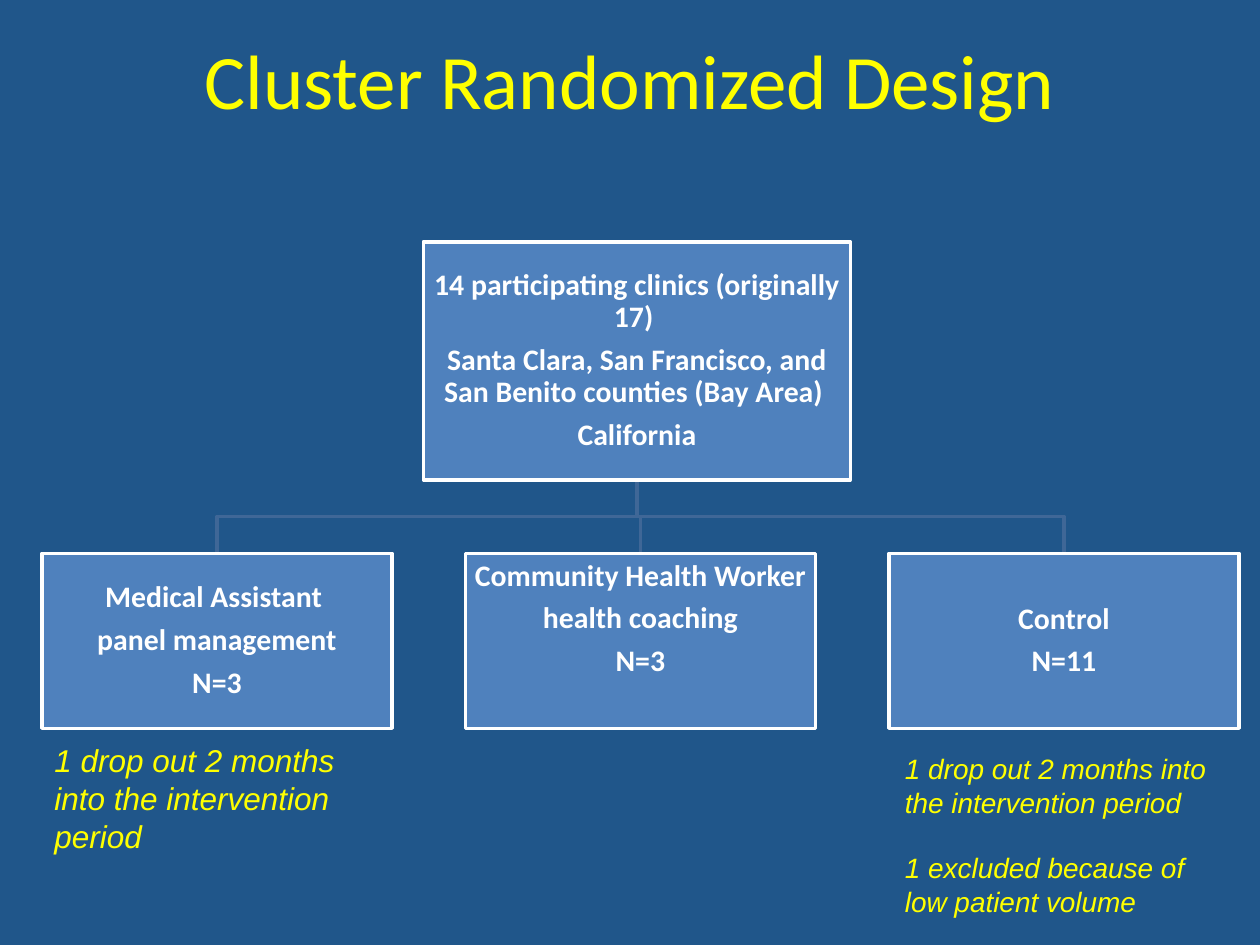
from pptx import Presentation
from pptx.dml.color import RGBColor
from pptx.enum.shapes import MSO_SHAPE
from pptx.enum.text import MSO_ANCHOR, PP_ALIGN
from pptx.util import Pt

NAVY = RGBColor(0x20, 0x56, 0x8A)
BLUE = RGBColor(0x4F, 0x81, 0xBD)
SLATE = RGBColor(0x3F, 0x67, 0x97)
YELLOW = RGBColor(0xFF, 0xFF, 0x00)
WHITE = RGBColor(0xFF, 0xFF, 0xFF)
RECTANGLE = MSO_SHAPE.RECTANGLE
TOP, MIDDLE = MSO_ANCHOR.TOP, MSO_ANCHOR.MIDDLE
LEFT, CENTER = PP_ALIGN.LEFT, PP_ALIGN.CENTER

ROOT = (242, 138.2, 244, 136)
ROOT_LINES = [
    "14 participating clinics (originally 17) ",
    "Santa Clara, San Francisco, and San Benito counties (Bay Area) ",
    "California",
]
ARM_LEFT, ARM_TOP, ARM_WIDTH, ARM_HEIGHT, ARM_PITCH = 24, 316.2, 200, 100, 242
ARMS = [
    (["Medical Assistant ", "panel management", "N=3"], 0.7),
    (["Community Health Worker", "health coaching", "N=3"], 25.3),
    (["Control", "N=11"], 0.7),
]
NOTES = [
    ((24, 420, 198, 73), 18, ["1 drop out 2 months into the intervention period"]),
    ((510, 426, 192, 105), 16, ["1 drop out 2 months into the intervention period",
                                "1 excluded because of low patient volume"]),
]


def apply_format(target, values):
    """Set each attribute named in values on target."""
    for name, value in values.items():
        setattr(target, name, value)


def write_lines(shape, lines, frame_format, para_format, font_format, color):
    """Fill a shape with one formatted paragraph per line."""
    frame = shape.text_frame
    apply_format(frame, {"word_wrap": True, **frame_format})
    for index, line in enumerate(lines):
        para = frame.paragraphs[0] if index == 0 else frame.add_paragraph()
        apply_format(para, para_format)
        span = para.add_run()
        span.text = line
        apply_format(span.font, font_format)
        span.font.color.rgb = color
    return frame


def add_title(page, text):
    """Add the centred page title."""
    box = page.shapes.add_textbox(Pt(18), Pt(0), Pt(684), Pt(90))
    write_lines(box, [text], {"vertical_anchor": MIDDLE}, {"alignment": CENTER},
                {"name": "Calibri", "size": Pt(44)}, YELLOW)


def add_branch(page, start, end):
    """Draw an elbow line from the root box down to an arm box."""
    (x1, y1), (x2, y2) = start, end
    bend = (y1 + y2) / 2
    builder = page.shapes.build_freeform(Pt(x1), Pt(y1))
    points = [(x1, bend), (x2, bend), (x2, y2)]
    builder.add_line_segments([(Pt(x), Pt(y)) for x, y in points], close=False)
    branch = builder.convert_to_shape()
    branch.shadow.inherit = False
    branch.fill.background()
    branch.line.color.rgb = SLATE
    branch.line.width = Pt(2)


def add_box(page, bounds, lines, bottom_margin=0.7):
    """Add a blue chart box with bold centred lines."""
    box = page.shapes.add_shape(RECTANGLE, *map(Pt, bounds))
    box.shadow.inherit = False
    box.fill.solid()
    box.fill.fore_color.rgb = BLUE
    box.line.color.rgb = WHITE
    box.line.width = Pt(2)
    frame_format = {
        "vertical_anchor": MIDDLE, "margin_left": Pt(0.7), "margin_right": Pt(0.7),
        "margin_top": Pt(0.7), "margin_bottom": Pt(bottom_margin),
    }
    para_format = {"alignment": CENTER, "line_spacing": 0.9, "space_after": Pt(5.95)}
    write_lines(box, lines, frame_format, para_format,
                {"name": "Calibri", "size": Pt(17), "bold": True}, WHITE)


def add_note(page, bounds, size, lines):
    """Add an italic remark whose paragraphs stand one line apart."""
    box = page.shapes.add_textbox(*map(Pt, bounds))
    frame = write_lines(box, lines, {"vertical_anchor": TOP}, {"alignment": LEFT},
                        {"name": "Arial", "size": Pt(size), "italic": True}, YELLOW)
    for para in frame.paragraphs[1:]:
        para.space_before = Pt(size * 1.15)


def main():
    """Build the deck and save it."""
    deck = Presentation()
    deck.slide_width, deck.slide_height = Pt(720), Pt(540)
    page = deck.slides.add_slide(deck.slide_layouts[6])
    page.background.fill.solid()
    page.background.fill.fore_color.rgb = NAVY

    add_title(page, "Cluster Randomized Design")
    left, top, width, height = ROOT
    arm_lefts = [ARM_LEFT + index * ARM_PITCH for index in range(len(ARMS))]
    for arm_left in arm_lefts:
        add_branch(page, (left + width / 2, top + height),
                   (arm_left + ARM_WIDTH / 2, ARM_TOP))
    add_box(page, ROOT, ROOT_LINES)
    for arm_left, (lines, bottom_margin) in zip(arm_lefts, ARMS):
        add_box(page, (arm_left, ARM_TOP, ARM_WIDTH, ARM_HEIGHT), lines, bottom_margin)
    for bounds, size, lines in NOTES:
        add_note(page, bounds, size, lines)
    deck.save("out.pptx")


if __name__ == "__main__":
    main()
